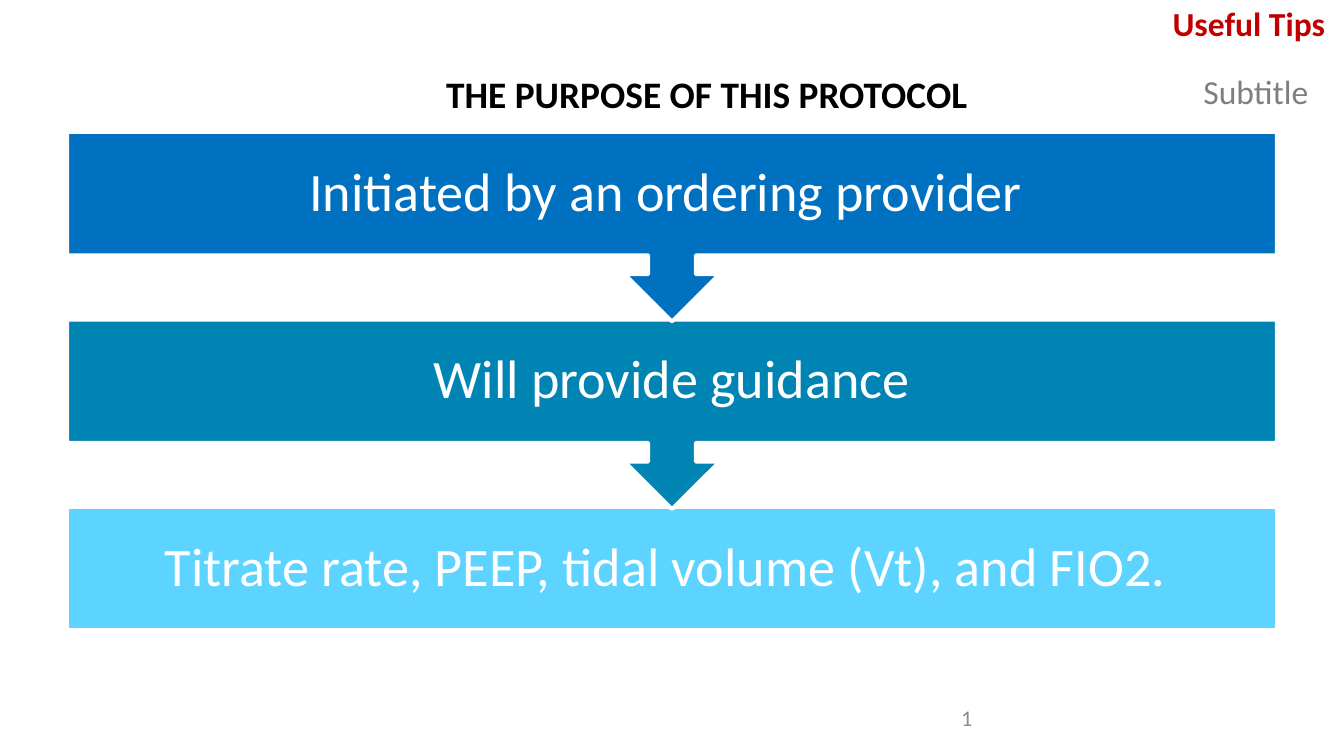
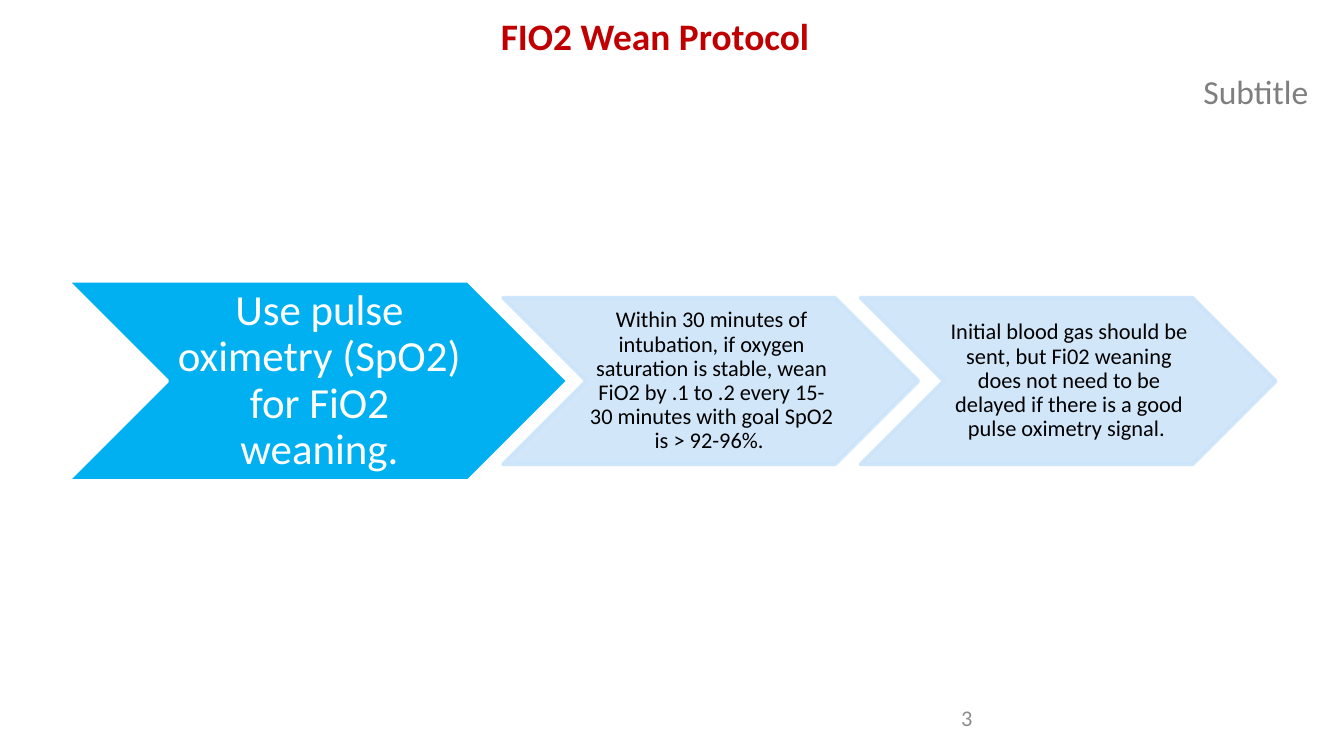
from pptx import Presentation
from pptx.dml.color import RGBColor
from pptx.enum.shapes import MSO_SHAPE
from pptx.enum.text import MSO_ANCHOR, PP_ALIGN
from pptx.oxml.ns import qn
from pptx.util import Pt
from lxml import etree

RECT = MSO_SHAPE.RECTANGLE
CALLOUT = MSO_SHAPE.UP_ARROW_CALLOUT
CHEVRON = MSO_SHAPE.CHEVRON
TOP, MIDDLE = MSO_ANCHOR.TOP, MSO_ANCHOR.MIDDLE
CENTER, RIGHT = PP_ALIGN.CENTER, PP_ALIGN.RIGHT

FONT = "Calibri"
WHITE, BLACK, RED = "FFFFFF", "000000", "C00000"
GREY, PALE_GREY = "7F7F7F", "8C8C8C"
BLUE, TEAL, SKY = "0070C0", "0084B4", "5DD4FF"
BRIGHT, PALE = "00B0F0", "CCE4F9"
INSETS = (7.2, 3.6, 7.2, 3.6)

STEPS = [
    ("Initiated by an ordering provider ", BLUE),
    ("Will provide guidance", TEAL),
    ("Titrate rate, PEEP, tidal volume (Vt), and FIO2. ", SKY),
]
LEAD = "Use pulse oximetry (SpO2) for FiO2 weaning."
NOTES = [
    "Within 30 minutes of intubation, if oxygen saturation is stable, wean "
    "FiO2 by .1 to .2 every 15-30 minutes with goal SpO2 is > 92-96%. ",
    "Initial blood gas should be sent, but Fi02 weaning does not need to be "
    "delayed if there is a good pulse oximetry signal. ",
]


def rgb(code):
    return RGBColor.from_string(code)


def add_text(slide, box, words, size, color, align=CENTER, anchor=TOP,
             bold=False, lead=None, insets=INSETS):
    frame = slide.shapes.add_textbox(*map(Pt, box)).text_frame
    frame.word_wrap = True
    frame.vertical_anchor = anchor
    (frame.margin_left, frame.margin_top,
     frame.margin_right, frame.margin_bottom) = map(Pt, insets)
    para = frame.paragraphs[0]
    para.alignment = align
    para.line_spacing = lead
    run = para.add_run()
    run.text = words
    run.font.name = FONT
    run.font.size = Pt(size)
    run.font.bold = bold
    run.font.color.rgb = rgb(color)
    return para


def add_form(slide, kind, box, fill, line=WHITE, alpha=None):
    """Add a filled preset shape; alpha is its opacity in percent."""
    form = slide.shapes.add_shape(kind, *map(Pt, box))
    form.shadow.inherit = False
    form.fill.solid()
    form.fill.fore_color.rgb = rgb(fill)
    form.line.color.rgb = rgb(line)
    form.line.width = Pt(2)
    if alpha:
        for color in form.element.spPr.iter(qn("a:srgbClr")):
            etree.SubElement(color, qn("a:alpha")).set("val", str(alpha * 1000))
    return form


def add_page(deck, number):
    """Add a blank slide with the shared subtitle and page number."""
    slide = deck.slides.add_slide(deck.slide_layouts[6])
    add_text(slide, (540, 34.5, 168, 29), "Subtitle", 18, GREY, RIGHT)
    add_text(slide, (474, 373.5, 54, 21.5), number, 12, PALE_GREY, RIGHT, MIDDLE)
    return slide


def add_steps(slide, box, steps):
    """Stack bands from the top; all but the last point to the next one."""
    left, top, width, height = box
    pitch = (height - 66) / (len(steps) - 1)
    for row, (words, fill) in reversed(list(enumerate(steps))):
        y = top + row * pitch
        if row == len(steps) - 1:
            add_form(slide, RECT, (left, y, width, 66), fill)
        else:
            form = add_form(slide, CALLOUT, (left, y, width, 101.5), fill)
            form.rotation = 180
        add_text(slide, (left, y, width, 66), words, 29, WHITE,
                 anchor=MIDDLE, lead=0.9, insets=(16.5,) * 4)


def add_arrow(slide, box, words, size, ink, fill, line, alpha=None):
    left, top, width, height = box
    add_form(slide, CHEVRON, box, fill, line, alpha)
    inner = (left + height / 2, top, width - height, height)
    add_text(slide, inner, words, size, ink, anchor=MIDDLE, lead=0.9,
             insets=(size / 12, size / 16, 0, size / 16))


def add_chain(slide, box, head, notes):
    """Place a large chevron, then smaller ones centred on it."""
    left, top, width, height = box
    add_arrow(slide, (left, top, 268.5, height), head, 23, WHITE, BRIGHT, WHITE)
    wide, high, step = 222.5, 89.25, 191.5
    start = left + width - wide - step * (len(notes) - 1)
    y = top + (height - high) / 2
    for col, words in enumerate(notes):
        add_arrow(slide, (start + col * step, y, wide, high), words,
                  12, BLACK, PALE, PALE, 90)


def add_purpose(deck):
    slide = add_page(deck, "1")
    add_text(slide, (203, 0, 514, 28), "Useful Tips", 18, RED, RIGHT, MIDDLE,
             bold=True, lead=0.9)
    add_steps(slide, (36, 70.75, 648, 267), STEPS)
    add_text(slide, (216, 34.5, 330, 31.5), "THE PURPOSE OF THIS PROTOCOL ",
             20, BLACK, bold=True)


def add_wean(deck):
    slide = add_page(deck, "3")
    add_chain(slide, (36, 150.5, 647.5, 107.25), LEAD, NOTES)
    add_text(slide, (138, 3.5, 426, 31.5), "FIO2 Wean Protocol", 20, RED,
             bold=True)


def main():
    deck = Presentation()
    deck.slide_width, deck.slide_height = Pt(720), Pt(405)
    add_purpose(deck)
    add_wean(deck)
    deck.save("out.pptx")


if __name__ == "__main__":
    main()
